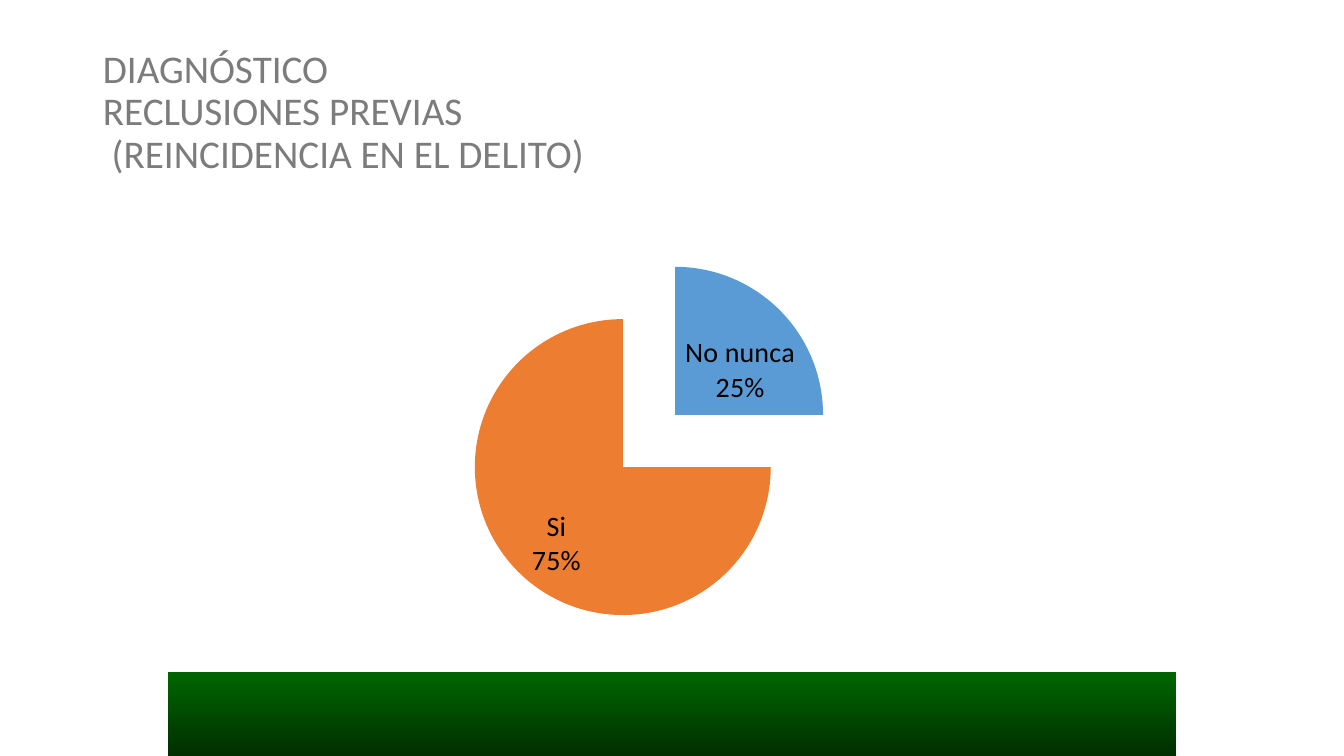
from lxml import etree
from pptx import Presentation
from pptx.chart.data import CategoryChartData
from pptx.dml.color import RGBColor
from pptx.enum.chart import XL_CHART_TYPE, XL_LABEL_POSITION
from pptx.enum.shapes import MSO_SHAPE
from pptx.enum.text import MSO_ANCHOR
from pptx.oxml.ns import qn
from pptx.util import Emu, Pt

PIE = XL_CHART_TYPE.PIE
BEST_FIT = XL_LABEL_POSITION.BEST_FIT
RECTANGLE = MSO_SHAPE.RECTANGLE
MIDDLE = MSO_ANCHOR.MIDDLE

# Content
FONT = "Calibri"
TITLE_LINES = ["DIAGNÓSTICO", "RECLUSIONES PREVIAS", " (REINCIDENCIA EN EL DELITO)"]
ANSWERS = [("No nunca", 25, "5B9BD5"), ("Si", 75, "ED7D31")]
BAND_COLOURS = ["006600", "002F00"]

# Boxes in px: left, top, width, height
SLIDE_SIZE = (1344, 756)
TITLE_BOX = (93, 40, 1159, 146)
CHART_BOX = (314, 196, 754, 444)
PIE_BOX = (464, 256, 370, 370)
BAND_BOX = (168, 672, 1008, 84)
EXPLOSION = 25


def px(length):
    return Emu(round(length * 914400 / 100.8))


def place(box):
    return [px(length) for length in box]


def colour(value):
    return RGBColor.from_string(value)


def new_element(tag, value):
    element = etree.Element(qn(tag))
    element.set("val", str(value))
    return element


def add_title(slide):
    frame = slide.shapes.add_textbox(*place(TITLE_BOX)).text_frame
    frame.word_wrap = True
    frame.vertical_anchor = MIDDLE
    paragraph = frame.paragraphs[0]
    paragraph.line_spacing = 0.9
    for index, line in enumerate(TITLE_LINES):
        if index:
            paragraph.add_line_break()
        run = paragraph.add_run()
        run.text = line
        run.font.name = FONT
        run.font.size = Pt(28)
        run.font.color.rgb = colour("7C7C7C")


def add_band(slide):
    band = slide.shapes.add_shape(RECTANGLE, *place(BAND_BOX))
    band.shadow.inherit = False
    band.line.fill.background()
    band.fill.gradient()
    band.fill.gradient_angle = 270
    for position, (stop, value) in enumerate(zip(band.fill.gradient_stops, BAND_COLOURS)):
        stop.position = position
        stop.color.rgb = colour(value)


def set_pie_area(chart):
    plot_area = chart.plots[0]._element.getparent()
    for old_layout in plot_area.findall(qn("c:layout")):
        plot_area.remove(old_layout)
    layout = etree.Element(qn("c:layout"))
    plot_area.insert(0, layout)
    manual = etree.SubElement(layout, qn("c:manualLayout"))
    left, top, width, height = CHART_BOX
    pie_left, pie_top, pie_width, pie_height = PIE_BOX
    for tag, value in [
        ("c:layoutTarget", "inner"),
        ("c:xMode", "edge"),
        ("c:yMode", "edge"),
        ("c:x", (pie_left - left) / width),
        ("c:y", (pie_top - top) / height),
        ("c:w", pie_width / width),
        ("c:h", pie_height / height),
    ]:
        manual.append(new_element(tag, value))


def add_pie(slide):
    names, values, colours = zip(*ANSWERS)
    data = CategoryChartData()
    data.categories = names
    data.add_series("Series 1", values)
    chart = slide.shapes.add_chart(PIE, *place(CHART_BOX), data).chart
    chart.has_title = False
    chart.has_legend = False
    chart.font.name = FONT
    chart.font.size = Pt(10)
    chart.font.color.rgb = colour("000000")
    plot = chart.plots[0]
    plot.vary_by_categories = True

    # Slices
    series = plot.series[0]
    for index, value in enumerate(colours):
        fill = series.points[index].format.fill
        fill.solid()
        fill.fore_color.rgb = colour(value)
    points = series._element.findall(qn("c:dPt"))
    for following in [points[0]] + [point.find(qn("c:spPr")) for point in points]:
        following.addprevious(new_element("c:explosion", EXPLOSION))

    # Labels
    labels = series.data_labels
    labels.show_value = False
    labels.show_category_name = True
    labels.show_percentage = True
    labels.number_format = "0%"
    labels.number_format_is_linked = False
    labels.position = BEST_FIT
    labels.font.name = FONT
    labels.font.size = Pt(20)
    labels.font.color.rgb = colour("000000")
    separator = etree.Element(qn("c:separator"))
    separator.text = "\n"
    labels._element.find(qn("c:showBubbleSize")).addnext(separator)
    set_pie_area(chart)


def main():
    presentation = Presentation()
    presentation.slide_width, presentation.slide_height = place(SLIDE_SIZE)
    slide = presentation.slides.add_slide(presentation.slide_layouts[6])
    add_title(slide)
    add_band(slide)
    add_pie(slide)
    presentation.save("out.pptx")


if __name__ == "__main__":
    main()
